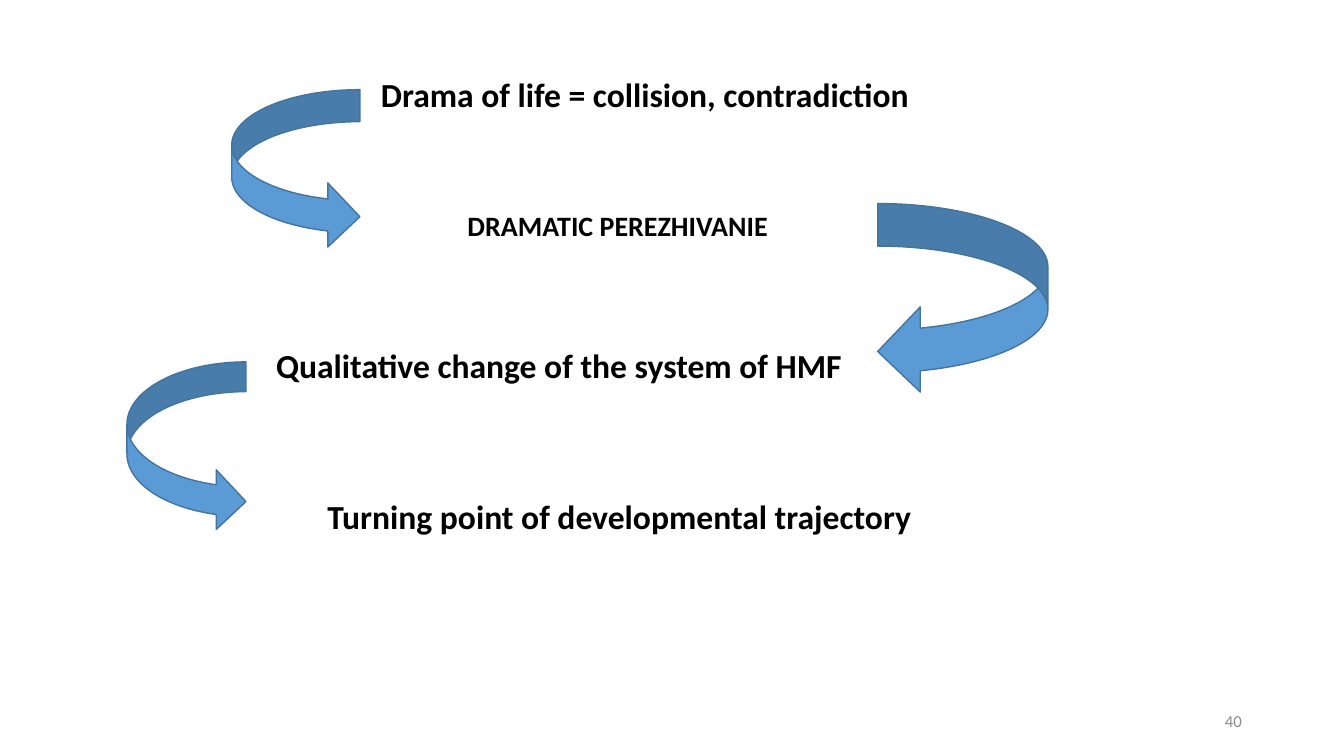
"""Build a slide where curved arrows lead from the drama of life to a turning point."""
from dataclasses import dataclass

from pptx import Presentation
from pptx.dml.color import RGBColor
from pptx.enum.shapes import MSO_SHAPE as Shape
from pptx.enum.text import MSO_ANCHOR as Anchor, PP_ALIGN as Align
from pptx.slide import Slide
from pptx.util import Cm, Pt

BLUE = RGBColor(0x5B, 0x9B, 0xD5)
DARK_BLUE = RGBColor(0x43, 0x73, 0x9E)
BLACK = RGBColor(0x00, 0x00, 0x00)
GREY = RGBColor(0x8C, 0x8C, 0x8C)


@dataclass(frozen=True)
class Box:
    left: float
    top: float
    width: float
    height: float

    def lengths(self) -> tuple[Cm, Cm, Cm, Cm]:
        return Cm(self.left), Cm(self.top), Cm(self.width), Cm(self.height)


@dataclass(frozen=True)
class Label:
    text: str
    box: Box
    size: int = 24
    bold: bool = True
    color: RGBColor = BLACK
    align: Align = Align.LEFT
    anchor: Anchor = Anchor.TOP
    wrap: bool = False


@dataclass(frozen=True)
class Arrow:
    kind: Shape
    box: Box


LABELS = [
    Label("Drama of life = collision, contradiction", Box(9.35, 1.75, 13.94, 1.27)),
    Label("DRAMATIC PEREZHIVANIE", Box(11.53, 5.13, 8.15, 1.12), size=20),
    Label("Qualitative change of the system of HMF", Box(6.71, 8.56, 14.91, 1.27)),
    Label("Turning point of developmental trajectory", Box(8, 12.37, 15.37, 1.27)),
    Label("40", Box(23.93, 17.65, 7.62, 1.02), size=12, bold=False, color=GREY,
          align=Align.RIGHT, anchor=Anchor.MIDDLE, wrap=True),
]

ARROWS = [
    Arrow(Shape.CURVED_RIGHT_ARROW, Box(5.84, 2.26, 3.23, 4.01)),
    Arrow(Shape.CURVED_LEFT_ARROW, Box(22.12, 5.13, 4.29, 4.8)),
    Arrow(Shape.CURVED_RIGHT_ARROW, Box(3.2, 9.12, 3, 4.27)),
]


def add_label(s: Slide, label: Label) -> None:
    tf = s.shapes.add_textbox(*label.box.lengths()).text_frame
    tf.word_wrap = label.wrap
    tf.vertical_anchor = label.anchor
    p = tf.paragraphs[0]
    p.alignment = label.align
    r = p.add_run()
    r.text = label.text
    formats = {"name": "Calibri", "size": Pt(label.size), "bold": label.bold}
    for name, value in formats.items():
        setattr(r.font, name, value)
    r.font.color.rgb = label.color


def add_arrow(s: Slide, arrow: Arrow) -> None:
    sp = s.shapes.add_shape(arrow.kind, *arrow.box.lengths())
    sp.shadow.inherit = False
    sp.fill.solid()
    sp.fill.fore_color.rgb = BLUE
    sp.line.color.rgb = DARK_BLUE
    sp.line.width = Pt(1)


def main() -> None:
    prs = Presentation()
    prs.slide_width, prs.slide_height = Cm(33.87), Cm(19.05)
    s = prs.slides.add_slide(prs.slide_layouts[6])
    for arrow in ARROWS:
        add_arrow(s, arrow)
    for label in LABELS:
        add_label(s, label)
    prs.save("out.pptx")


if __name__ == "__main__":
    main()
